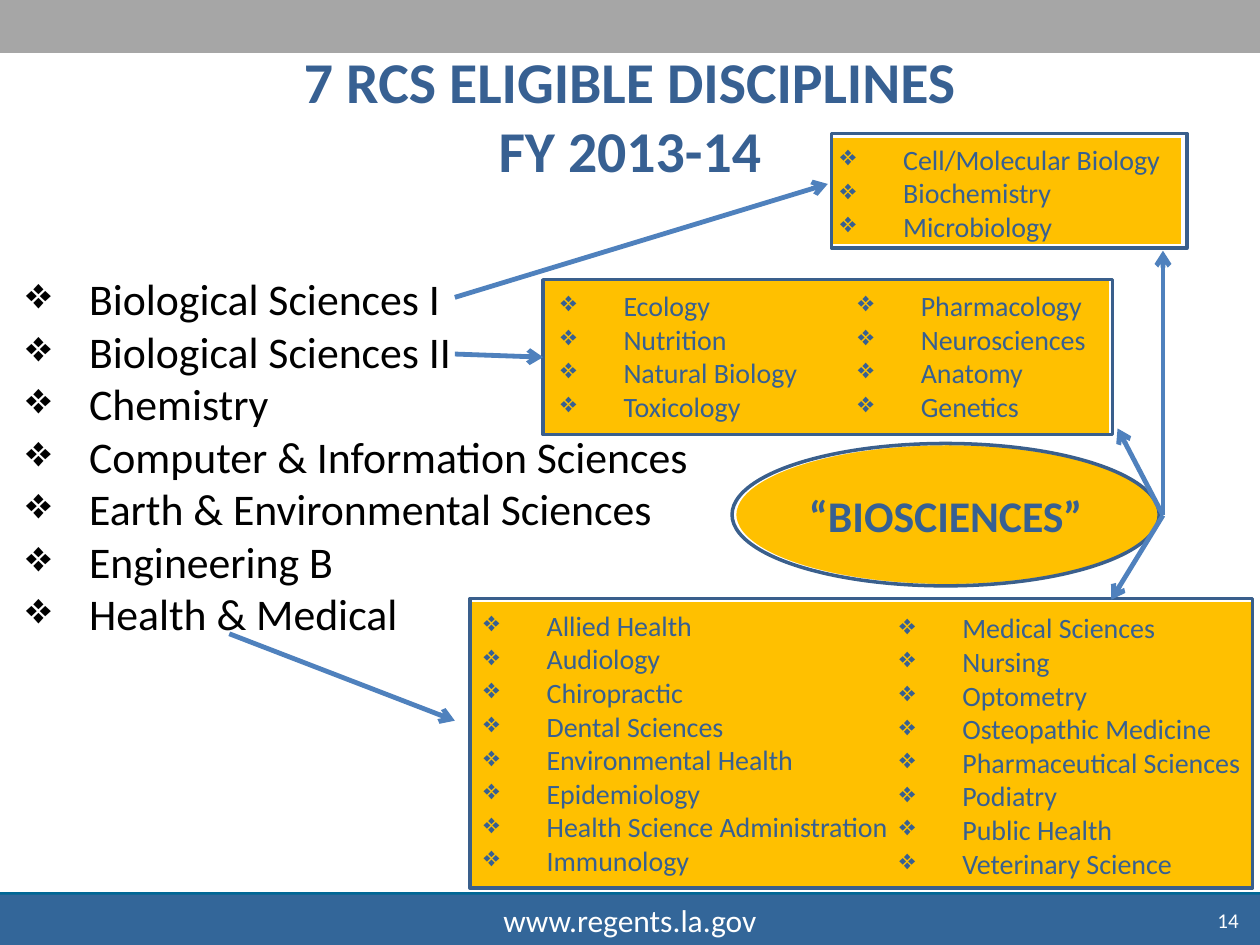
from lxml.etree import SubElement
from pptx import Presentation
from pptx.dml.color import RGBColor
from pptx.enum.shapes import MSO_CONNECTOR, MSO_SHAPE as SHAPE
from pptx.enum.text import MSO_ANCHOR as ANCHOR, MSO_AUTO_SIZE as FIT, PP_ALIGN as ALIGN
from pptx.oxml.ns import qn
from pptx.util import Inches, Pt

WHITE = RGBColor(0xFF, 0xFF, 0xFF)
BLACK = RGBColor(0x00, 0x00, 0x00)
GRAY = RGBColor(0xA6, 0xA6, 0xA6)
TEAL = RGBColor(0x00, 0x67, 0x95)
FOOTER_BLUE = RGBColor(0x33, 0x66, 0x99)
TEXT_BLUE = RGBColor(0x37, 0x60, 0x92)
OUTLINE_BLUE = RGBColor(0x3A, 0x5F, 0x8C)
ARROW_BLUE = RGBColor(0x4F, 0x81, 0xBD)
GOLD = RGBColor(0xFF, 0xC0, 0x00)

TITLE = {"size": Pt(33), "bold": True}
HEADING = {"size": Pt(25), "bold": True}
DISCIPLINE = {"size": Pt(25)}
FIELD = {"size": Pt(16)}
FOOTER = {"size": Pt(18)}
PAGE = {"size": Pt(12)}

PANELS = [
    (SHAPE.OVAL, (5.83, 3.52, 3.39, 1.13)),
    (SHAPE.RECTANGLE, (3.72, 4.76, 6.24, 2.29)),
    (SHAPE.RECTANGLE, (6.57, 1.08, 2.82, 0.87)),
    (SHAPE.RECTANGLE, (4.31, 2.22, 4.51, 1.23)),
]
DISCIPLINES = [
    "Biological Sciences I", "Biological Sciences II", "Chemistry",
    "Computer & Information Sciences", "Earth & Environmental Sciences",
    "Engineering B", "Health & Medical",
]
FIELD_LISTS = [
    ((6.57, 1.08, 3.58, 0.91),
     ["Cell/Molecular Biology", "Biochemistry", "Microbiology"]),
    ((4.35, 2.24, 3.45, 1.18),
     ["Ecology", "Nutrition", "Natural Biology", "Toxicology"]),
    ((6.71, 2.24, 2.36, 1.18),
     ["Pharmacology", "Neurosciences", "Anatomy", "Genetics"]),
    ((3.74, 4.78, 3.58, 2.26),
     ["Allied Health", "Audiology", "Chiropractic", "Dental Sciences",
      "Environmental Health", "Epidemiology", "Health Science Administration",
      "Immunology"]),
    ((7.04, 4.8, 3.03, 2.26),
     ["Medical Sciences", "Nursing", "Optometry", "Osteopathic Medicine",
      "Pharmaceutical Sciences", "Podiatry", "Public Health",
      "Veterinary Science"]),
]
BIOSCIENCES_HUB = (9.23, 4.09)
ARROWS = [
    ((3.61, 2.36), (6.57, 1.46)),
    ((1.82, 5.03), (3.61, 5.72)),
    (BIOSCIENCES_HUB, (9.23, 1.99)),
    (BIOSCIENCES_HUB, (8.87, 3.4)),
    (BIOSCIENCES_HUB, (8.82, 4.76)),
]


def inches(values):
    return [Inches(value) for value in values]


def write(shape, lines, style, color, align=ALIGN.LEFT, anchor=ANCHOR.TOP):
    frame = shape.text_frame
    layout = {"word_wrap": True, "auto_size": FIT.NONE, "vertical_anchor": anchor}
    for name, value in layout.items():
        setattr(frame, name, value)
    frame.text = "\n".join(lines)
    for paragraph in frame.paragraphs:
        paragraph.alignment = align
        for run in paragraph.runs:
            for name, value in {"name": "Calibri", **style}.items():
                setattr(run.font, name, value)
            run.font.color.rgb = color


def add_block(slide, kind, box, fill=None, line=None):
    block = slide.shapes.add_shape(kind, *inches(box))
    block.shadow.inherit = False
    if fill is None:
        block.fill.background()
    else:
        block.fill.solid()
        block.fill.fore_color.rgb = fill
    if line is None:
        block.line.fill.background()
    else:
        block.line.color.rgb = line
        block.line.width = Pt(2)
    return block


def add_text(slide, box, lines, *formats):
    label = slide.shapes.add_textbox(*inches(box))
    write(label, lines, *formats)
    return label


def add_bullets(slide, box, items, style, color):
    bullets = add_text(slide, box, items, style, color)
    for paragraph in bullets.text_frame.paragraphs:
        properties = paragraph._p.get_or_add_pPr()
        properties.set("marL", str(Inches(0.5)))
        properties.set("indent", str(Inches(-0.5)))
        SubElement(properties, qn("a:buChar"), char="❖")


def add_arrow(slide, start, end):
    arrow = slide.shapes.add_connector(MSO_CONNECTOR.STRAIGHT, *inches(start + end))
    arrow.line.color.rgb = ARROW_BLUE
    arrow.line.width = Pt(2.75)
    SubElement(arrow.line._get_or_add_ln(), qn("a:tailEnd"), type="arrow")
    SubElement(arrow._element.spPr, qn("a:effectLst"))
    return arrow


def add_title(slide, box, text):
    title = slide.shapes.title
    for name, value in zip(("left", "top", "width", "height"), inches(box)):
        setattr(title, name, value)
    write(title, [text], TITLE, TEXT_BLUE, ALIGN.CENTER, ANCHOR.MIDDLE)


def add_bars(slide):
    add_block(slide, SHAPE.RECTANGLE, (0, 7.08, 10, 0.42), TEAL)
    add_block(slide, SHAPE.RECTANGLE, (0, 0, 10, 0.42), GRAY)
    footer = add_block(slide, SHAPE.RECTANGLE, (0, 7.1, 10, 0.4), FOOTER_BLUE)
    write(footer, ["www.regents.la.gov"], FOOTER, WHITE, ALIGN.CENTER, ANCHOR.MIDDLE)
    add_text(slide, (7.6, 7.1, 2.33, 0.4), ["14"], PAGE, WHITE, ALIGN.RIGHT, ANCHOR.MIDDLE)


def main():
    deck = Presentation()
    deck.slide_width, deck.slide_height = inches((10, 7.5))
    slide = deck.slides.add_slide(deck.slide_layouts[5])

    add_bars(slide)
    add_title(slide, (0, 0.56, 10, 0.71), "7 RCS ELIGIBLE DISCIPLINES\vFY 2013-14")
    for kind, box in PANELS:
        add_block(slide, kind, box, GOLD, WHITE)

    add_bullets(slide, (0.11, 2.11, 5.54, 3.05), DISCIPLINES, DISCIPLINE, BLACK)
    for box, fields in FIELD_LISTS:
        add_bullets(slide, box, fields, FIELD, TEXT_BLUE)

    biosciences = add_block(slide, SHAPE.OVAL, (5.81, 3.52, 3.39, 1.13), line=OUTLINE_BLUE)
    write(biosciences, ["“BIOSCIENCES”"], HEADING, TEXT_BLUE, ALIGN.CENTER, ANCHOR.MIDDLE)
    add_block(slide, SHAPE.RECTANGLE, (6.6, 1.06, 2.82, 0.91), line=OUTLINE_BLUE)
    add_block(slide, SHAPE.RECTANGLE, (3.73, 4.75, 6.21, 2.3), line=OUTLINE_BLUE)
    biology_two = add_block(slide, SHAPE.RECTANGLE, (4.31, 2.22, 4.52, 1.23), line=OUTLINE_BLUE)

    for start, end in ARROWS:
        add_arrow(slide, start, end)
    add_arrow(slide, (3.61, 2.81), (4.31, 2.83)).end_connect(biology_two, 1)

    deck.save("out.pptx")


if __name__ == "__main__":
    main()
